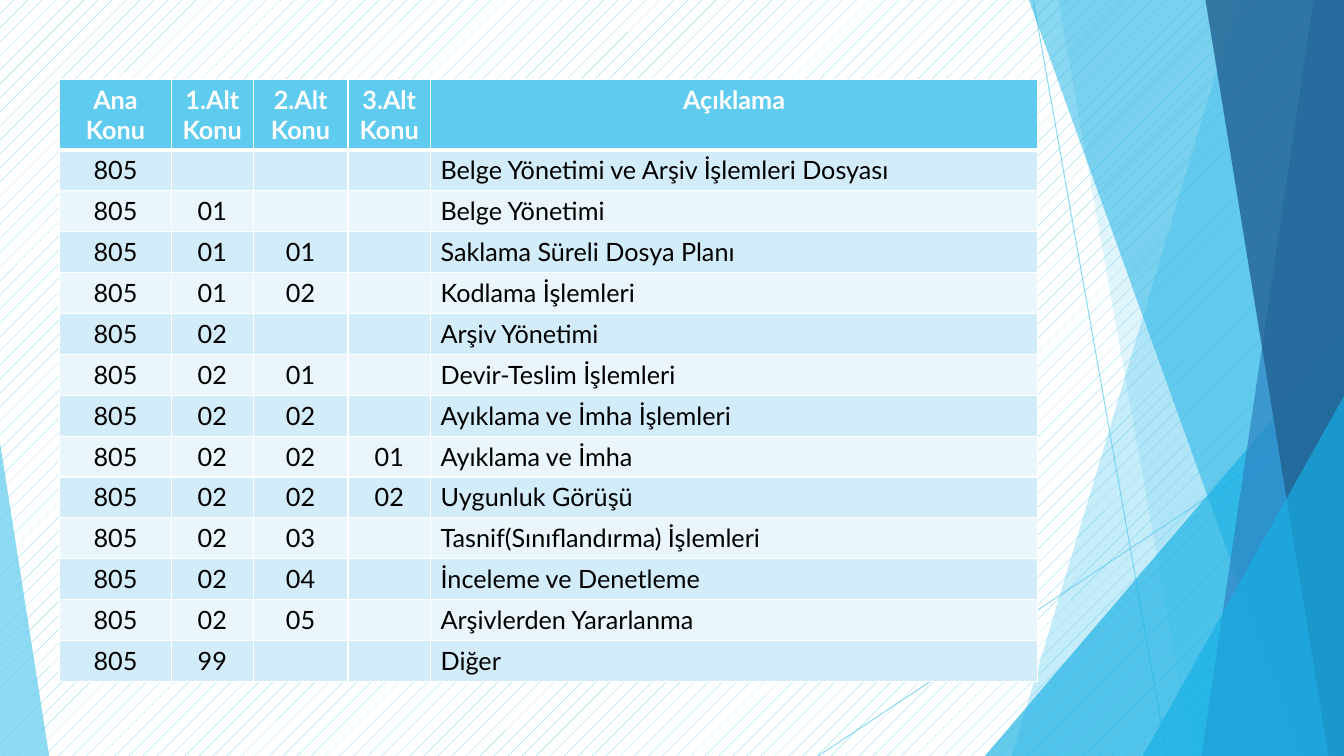
from lxml import etree
from pptx import Presentation
from pptx import util as u
from pptx.dml.color import RGBColor
from pptx.enum import dml, shapes, text
from pptx.oxml import ns

WHITE = RGBColor(0xFF, 0xFF, 0xFF)
BLACK = RGBColor(0x00, 0x00, 0x00)
SKY = RGBColor(0x5F, 0xCB, 0xEF)
CYAN = RGBColor(0x17, 0xB0, 0xE4)
BLUE = RGBColor(0x2E, 0x83, 0xC3)
NAVY = RGBColor(0x22, 0x62, 0x92)
BAND_DARK = RGBColor(0xD2, 0xEC, 0xF9)
BAND_LIGHT = RGBColor(0xEA, 0xF6, 0xFC)

WIDTH, HEIGHT = 33.87, 19.05
HEADER_HEIGHT, ROW_HEIGHT = 1.73, 1.03
COLUMN_WIDTHS = [2.82, 2.06, 2.39, 2.08, 15.3]

HEADINGS = ["Ana Konu", "1.Alt Konu", "2.Alt Konu", "3.Alt Konu", "Açıklama"]
# Subject codes below the main subject, and the description
FILE_PLAN = [
    ("", "Belge Yönetimi ve Arşiv İşlemleri Dosyası"),
    ("01", "Belge Yönetimi"),
    ("01 01", "Saklama Süreli Dosya Planı"),
    ("01 02", "Kodlama İşlemleri"),
    ("02", "Arşiv Yönetimi"),
    ("02 01", "Devir-Teslim İşlemleri"),
    ("02 02", "Ayıklama ve İmha İşlemleri"),
    ("02 02 01", "Ayıklama ve İmha"),
    ("02 02 02", "Uygunluk Görüşü"),
    ("02 03", "Tasnif(Sınıflandırma) İşlemleri"),
    ("02 04", "İnceleme ve Denetleme"),
    ("02 05", "Arşivlerden Yararlanma"),
    ("99", "Diğer"),
]


class SlideBuilder:
    font_name = "Lato"
    font_size = u.Pt(18)

    def __init__(self, page):
        self.page = page

    def background(self, fore, back):
        fill = self.page.background.fill
        fill.patterned()
        fill.pattern = dml.MSO_PATTERN.PERCENT_5
        fill.fore_color.rgb = fore
        fill.back_color.rgb = back

    def set_opacity(self, item, percent):
        for color in item.element.spPr.iter(ns.qn("a:srgbClr")):
            etree.SubElement(color, ns.qn("a:alpha"), val=str(percent * 1000))

    def paint(self, shape, color, opacity):
        shape.shadow.inherit = False
        shape.fill.solid()
        shape.fill.fore_color.rgb = color
        shape.line.fill.background()
        self.set_opacity(shape, opacity)

    def line(self, start, end, color, opacity):
        ends = [u.Cm(value) for value in (*start, *end)]
        line = self.page.shapes.add_connector(shapes.MSO_CONNECTOR.STRAIGHT, *ends)
        line.line.color.rgb = color
        line.line.width = u.Pt(0.75)
        self.set_opacity(line, opacity)
        etree.SubElement(line.element.spPr, ns.qn("a:effectLst"))

    def right_panel(self, top_x, bottom_x, color, opacity):
        """Full-height panel between a slanted left edge and the slide's right edge."""
        builder = self.page.shapes.build_freeform(u.Cm(top_x), 0)
        corners = [(WIDTH, 0), (WIDTH, HEIGHT), (bottom_x, HEIGHT)]
        builder.add_line_segments([(u.Cm(x), u.Cm(y)) for x, y in corners])
        self.paint(builder.convert_to_shape(), color, opacity)

    def corner_triangle(self, left, width, height, apex, color, opacity):
        """Triangle that stands on the slide's bottom edge."""
        shape = self.page.shapes.add_shape(
            shapes.MSO_SHAPE.ISOSCELES_TRIANGLE,
            u.Cm(left), u.Cm(HEIGHT - height), u.Cm(width), u.Cm(height))
        shape.adjustments[0] = apex
        self.paint(shape, color, opacity)

    def cell_borders(self, cell, top, bottom):
        properties = cell._tc.get_or_add_tcPr()
        for side, points in (("L", 1), ("R", 1), ("T", top), ("B", bottom)):
            border = etree.SubElement(properties, ns.qn(f"a:ln{side}"), w=str(u.Pt(points)))
            solid = etree.SubElement(border, ns.qn("a:solidFill"))
            etree.SubElement(solid, ns.qn("a:srgbClr"), val=str(WHITE))

    def cell(self, cell, words, fill, color, bold, centred, top, bottom):
        self.cell_borders(cell, top, bottom)
        cell.fill.solid()
        cell.fill.fore_color.rgb = fill
        cell.text_frame.text = words
        para = cell.text_frame.paragraphs[0]
        para.alignment = text.PP_ALIGN.CENTER if centred else text.PP_ALIGN.LEFT
        para.font.size = self.font_size
        for span in para.runs:
            span.font.name = self.font_name
            span.font.size = self.font_size
            span.font.bold = bold
            span.font.color.rgb = color

    def table(self, left, top, widths, rows):
        height = HEADER_HEIGHT + ROW_HEIGHT * (len(rows) - 1)
        table = self.page.shapes.add_table(
            len(rows), len(widths), u.Cm(left), u.Cm(top),
            u.Cm(sum(widths)), u.Cm(height)).table
        for column, width in zip(table.columns, widths):
            column.width = u.Cm(width)
        for i, row in enumerate(rows):
            header = i == 0
            table.rows[i].height = u.Cm(HEADER_HEIGHT if header else ROW_HEIGHT)
            band = SKY if header else BAND_DARK if i % 2 else BAND_LIGHT
            for j, words in enumerate(row):
                self.cell(table.cell(i, j), words, band,
                          color=WHITE if header else BLACK, bold=header,
                          centred=header or j < len(row) - 1,
                          top=3 if i == 1 else 1, bottom=3 if header else 1)


def main():
    deck = Presentation()
    deck.slide_width, deck.slide_height = u.Cm(WIDTH), u.Cm(HEIGHT)
    slide = SlideBuilder(deck.slides.add_slide(deck.slide_layouts[6]))

    # Background and facets
    slide.background(SKY, WHITE)
    slide.line((26.04, 0), (29.41, HEIGHT), SKY, 70)
    slide.line((WIDTH, 10.24), (20.62, HEIGHT), SKY, 70)
    slide.right_panel(31.19, 25.5, SKY, 36)
    slide.right_panel(26.67, 30.05, SKY, 20)
    slide.corner_triangle(24.82, 9.05, 10.59, 1, CYAN, 66)
    slide.right_panel(25.93, 32.79, CYAN, 50)
    slide.right_panel(33.1, 30.28, BLUE, 70)
    slide.right_panel(30.38, 33.48, NAVY, 80)
    slide.corner_triangle(28.8, 5.07, 9.07, 1, CYAN, 66)
    slide.corner_triangle(0, 1.24, 7.9, 0, SKY, 70)

    # File plan table
    rows = [HEADINGS]
    for codes, description in FILE_PLAN:
        levels = ["805", *codes.split()]
        blanks = [""] * (len(HEADINGS) - 1 - len(levels))
        rows.append([*levels, *blanks, description])
    slide.table(1.5, 2, COLUMN_WIDTHS, rows)

    deck.save("out.pptx")


if __name__ == "__main__":
    main()
